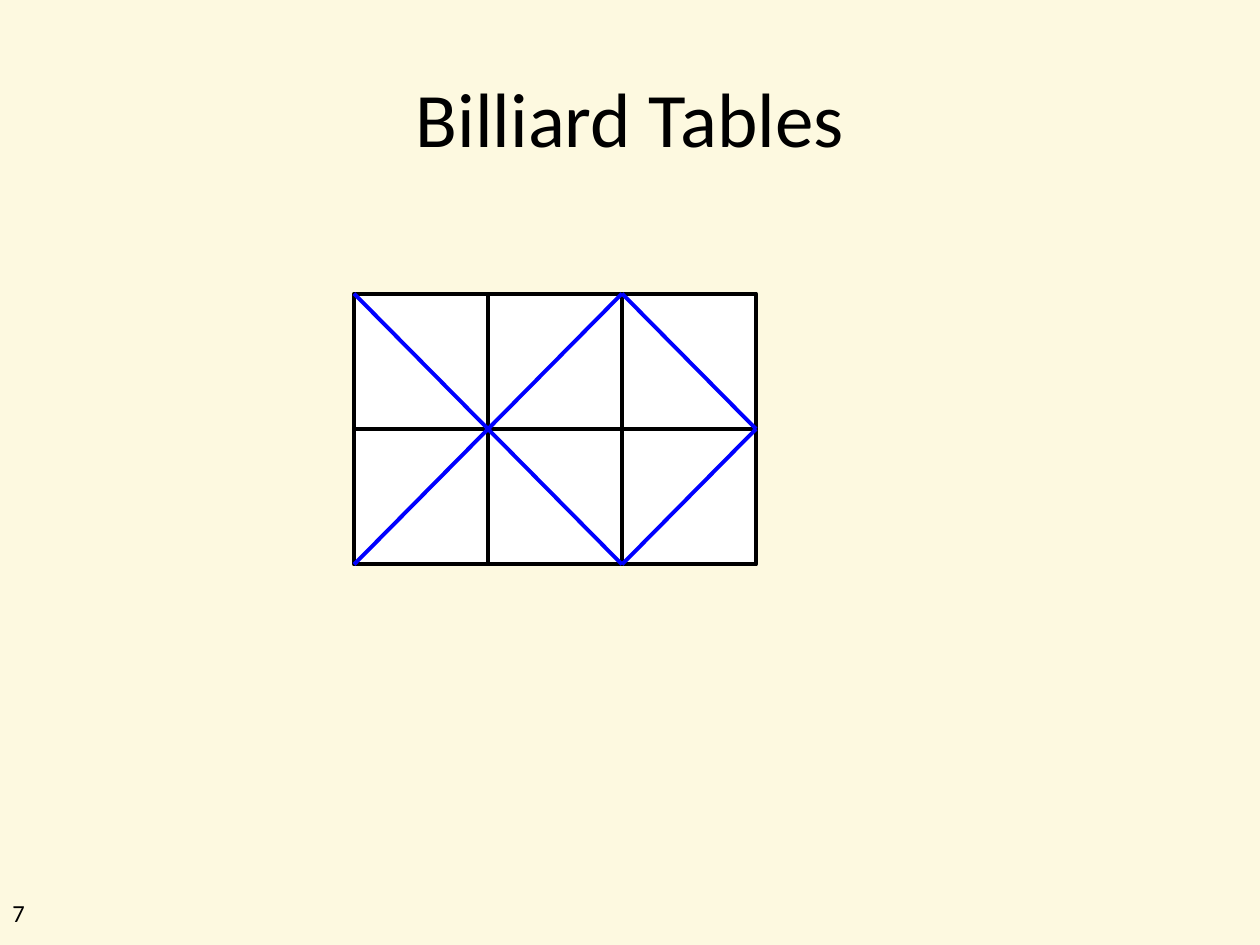
from dataclasses import dataclass
from itertools import pairwise

from lxml.etree import SubElement
from pptx import Presentation
from pptx.dml.color import RGBColor as RGB
from pptx.enum.shapes import MSO_CONNECTOR as Link, MSO_SHAPE as Shape
from pptx.enum.text import MSO_ANCHOR as Anchor, PP_ALIGN as Align
from pptx.oxml.ns import qn
from pptx.util import Inches, Pt


@dataclass(frozen=True)
class Theme:
    back: RGB = RGB(0xFD, 0xF9, 0xE0)
    cloth: RGB = RGB(0xFF, 0xFF, 0xFF)
    ink: RGB = RGB(0, 0, 0)
    track: RGB = RGB(0, 0, 0xFF)
    font: str = "Calibri"
    title: int = 44
    number: int = 14
    stroke: float = 2.25


THEME = Theme()


def write(shape, text, size, align=Align.LEFT, anchor=Anchor.TOP):
    frame = shape.text_frame
    frame.word_wrap = True
    frame.vertical_anchor = anchor
    para = frame.paragraphs[0]
    para.alignment = align
    run = para.add_run()
    run.text = text
    run.font.name = THEME.font
    run.font.size = Pt(size)
    run.font.color.rgb = THEME.ink


def add_title(slide, text, left, top, width, height):
    title = slide.shapes.title
    title.left, title.top = Inches(left), Inches(top)
    title.width, title.height = Inches(width), Inches(height)
    write(title, text, THEME.title, align=Align.CENTER, anchor=Anchor.MIDDLE)


def add_number(slide, text, left, top, width, height):
    box = slide.shapes.add_textbox(*map(Inches, (left, top, width, height)))
    write(box, text, THEME.number)


def add_line(shapes, start, end, color):
    line = shapes.add_connector(Link.STRAIGHT, *map(Inches, (*start, *end)))
    line.line.color.rgb = color
    line.line.width = Pt(THEME.stroke)
    SubElement(line._element.spPr, qn("a:effectLst"))


def add_table(slide, left, top, width, height, cols, rows, bounces):
    """Draw a billiard table as a grid, with the ball's track over it.

    Bounces are (column, row) grid points.
    """
    def point(col, row):
        return left + width * col / cols, top + height * row / rows

    grid = slide.shapes.add_group_shape().shapes
    cloth = grid.add_shape(Shape.RECTANGLE,
                           *map(Inches, (left, top, width, height)))
    cloth.shadow.inherit = False
    cloth.fill.solid()
    cloth.fill.fore_color.rgb = THEME.cloth
    cloth.line.color.rgb = THEME.ink
    cloth.line.width = Pt(THEME.stroke)
    for row in range(1, rows):
        add_line(grid, point(0, row), point(cols, row), THEME.ink)
    for col in range(1, cols):
        add_line(grid, point(col, 0), point(col, rows), THEME.ink)

    for start, end in pairwise(bounces):
        add_line(slide.shapes, point(*start), point(*end), THEME.track)


def main():
    deck = Presentation()
    deck.slide_width, deck.slide_height = Inches(10), Inches(7.5)
    slide = deck.slides.add_slide(deck.slide_layouts[5])
    slide.background.fill.solid()
    slide.background.fill.fore_color.rgb = THEME.back

    add_title(slide, "Billiard Tables", 0.5, 0.3, 9, 1.25)
    add_table(slide, 2.81, 2.33, 3.19, 2.15, cols=3, rows=2,
              bounces=[(0, 2), (2, 0), (3, 1), (2, 2), (0, 0)])
    add_number(slide, "7", 0, 7.08, 0.92, 0.39)
    deck.save("out.pptx")


if __name__ == "__main__":
    main()
